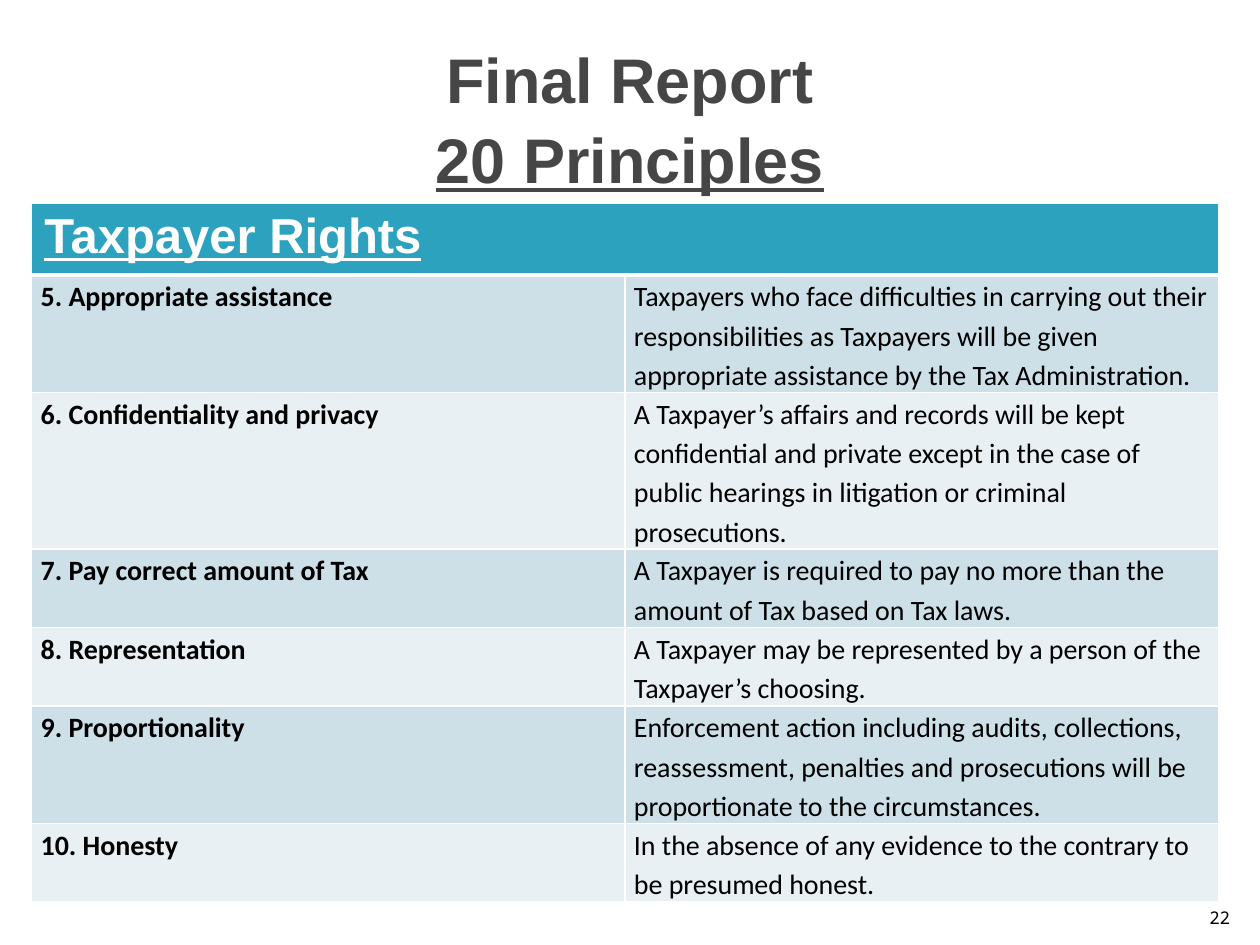
from lxml.etree import SubElement
from pptx import Presentation
from pptx.dml.color import RGBColor
from pptx.enum.text import MSO_ANCHOR, PP_ALIGN
from pptx.oxml.ns import qn
from pptx.util import Cm, Pt

WHITE = RGBColor(0xFF, 0xFF, 0xFF)
BLACK = RGBColor(0x00, 0x00, 0x00)
GREY = RGBColor(0x46, 0x46, 0x46)
TEAL = RGBColor(0x2D, 0xA2, 0xBF)
BANDS = [RGBColor(0xCD, 0xE0, 0xE8), RGBColor(0xE8, 0xF0, 0xF4)]

LINE = 0.79  # height of one text line in the table, in cm
HEAD = 1.27

# Right, explanation, lines of text
RIGHTS = [
    ("5. Appropriate assistance",
     "Taxpayers who face difficulties in carrying out their responsibilities "
     "as Taxpayers will be given appropriate assistance by the Tax "
     "Administration.", 3),
    ("6. Confidentiality and privacy",
     "A Taxpayer’s affairs and records will be kept confidential and private "
     "except in the case of public hearings in litigation or criminal "
     "prosecutions.", 4),
    ("7. Pay correct amount of Tax",
     "A Taxpayer is required to pay no more than the amount of Tax based on "
     "Tax laws.", 2),
    ("8. Representation",
     "A Taxpayer may be represented by a person of the Taxpayer’s choosing.",
     2),
    ("9. Proportionality",
     "Enforcement action including audits, collections, reassessment, "
     "penalties and prosecutions will be proportionate to the "
     "circumstances.", 3),
    ("10. Honesty",
     "In the absence of any evidence to the contrary to be presumed honest.",
     2),
]


def write(para, text, font="Calibri", size=16, color=BLACK, bold=False,
          under=False, align=None, space=None):
    run = para.add_run()
    run.text = text
    run.font.name = font
    run.font.size = Pt(size)
    run.font.color.rgb = color
    run.font.bold = bold
    run.font.underline = under
    if align is not None:
        para.alignment = align
    if space is not None:
        para.line_spacing = space


def edge(cell, base=1):
    """Draw white borders round a cell; base is the bottom width in points."""
    props = cell._tc.get_or_add_tcPr()
    for spot, side in enumerate("LRTB"):
        width = base if side == "B" else 1
        line = SubElement(props, qn(f"a:ln{side}"), w=str(Pt(width)))
        fill = SubElement(line, qn("a:solidFill"))
        SubElement(fill, qn("a:srgbClr"), val=str(WHITE))
        props.insert(spot, line)


class Deck:
    def __init__(self):
        self.show = Presentation()
        self.show.slide_width = Cm(25.4)
        self.show.slide_height = Cm(19.05)
        self.slide = self.show.slides.add_slide(self.show.slide_layouts[6])

    def box(self, left, top, width, height, anchor):
        shape = self.slide.shapes.add_textbox(
            Cm(left), Cm(top), Cm(width), Cm(height))
        frame = shape.text_frame
        frame.word_wrap = True
        frame.vertical_anchor = anchor
        return frame

    def title(self, first, second):
        frame = self.box(1.27, 0.76, 22.86, 3.18, MSO_ANCHOR.MIDDLE)
        look = dict(font="Arial", size=36, color=GREY, bold=True,
                    align=PP_ALIGN.CENTER, space=1.05)
        para = frame.paragraphs[0]
        write(para, first, **look)
        para.add_line_break()
        write(para, second, under=True, **look)

    def number(self, text):
        frame = self.box(24.03, 17.81, 1.02, 1.02, MSO_ANCHOR.BOTTOM)
        write(frame.paragraphs[0], text, font="Noto Sans Mono", size=10,
              align=PP_ALIGN.RIGHT)

    def cell(self, cell, text, fill, base=1, inset=None, **look):
        cell.fill.solid()
        cell.fill.fore_color.rgb = fill
        edge(cell, base)
        if inset is not None:
            cell.margin_left = cell.margin_right = Cm(inset)
            cell.margin_top = cell.margin_bottom = 0
        if text:
            write(cell.text_frame.paragraphs[0], text, **look)

    def table(self, head, rows):
        high = HEAD + LINE * sum(row[2] for row in rows)
        grid = self.slide.shapes.add_table(
            len(rows) + 1, 2, Cm(0.64), Cm(4.1), Cm(23.92), Cm(high)).table
        grid.rows[0].height = Cm(HEAD)
        grid.cell(0, 0).merge(grid.cell(0, 1))
        for col, text in enumerate((head, "")):
            self.cell(grid.cell(0, col), text, TEAL, base=3, font="Arial",
                      size=28, color=WHITE, bold=True, under=True)
        for num, (name, note, lines) in enumerate(rows, 1):
            grid.rows[num].height = Cm(LINE * lines)
            for col, text in enumerate((name, note)):
                self.cell(grid.cell(num, col), text, BANDS[(num - 1) % 2],
                          inset=0.18, bold=col == 0, space=1.15)
        grid.cell(1, 1).text_frame.paragraphs[0].space_after = Pt(6)


def main():
    deck = Deck()
    deck.number("22")
    deck.table("Taxpayer Rights", RIGHTS)
    deck.title("Final Report", "20 Principles")
    deck.show.save("out.pptx")


if __name__ == "__main__":
    main()
